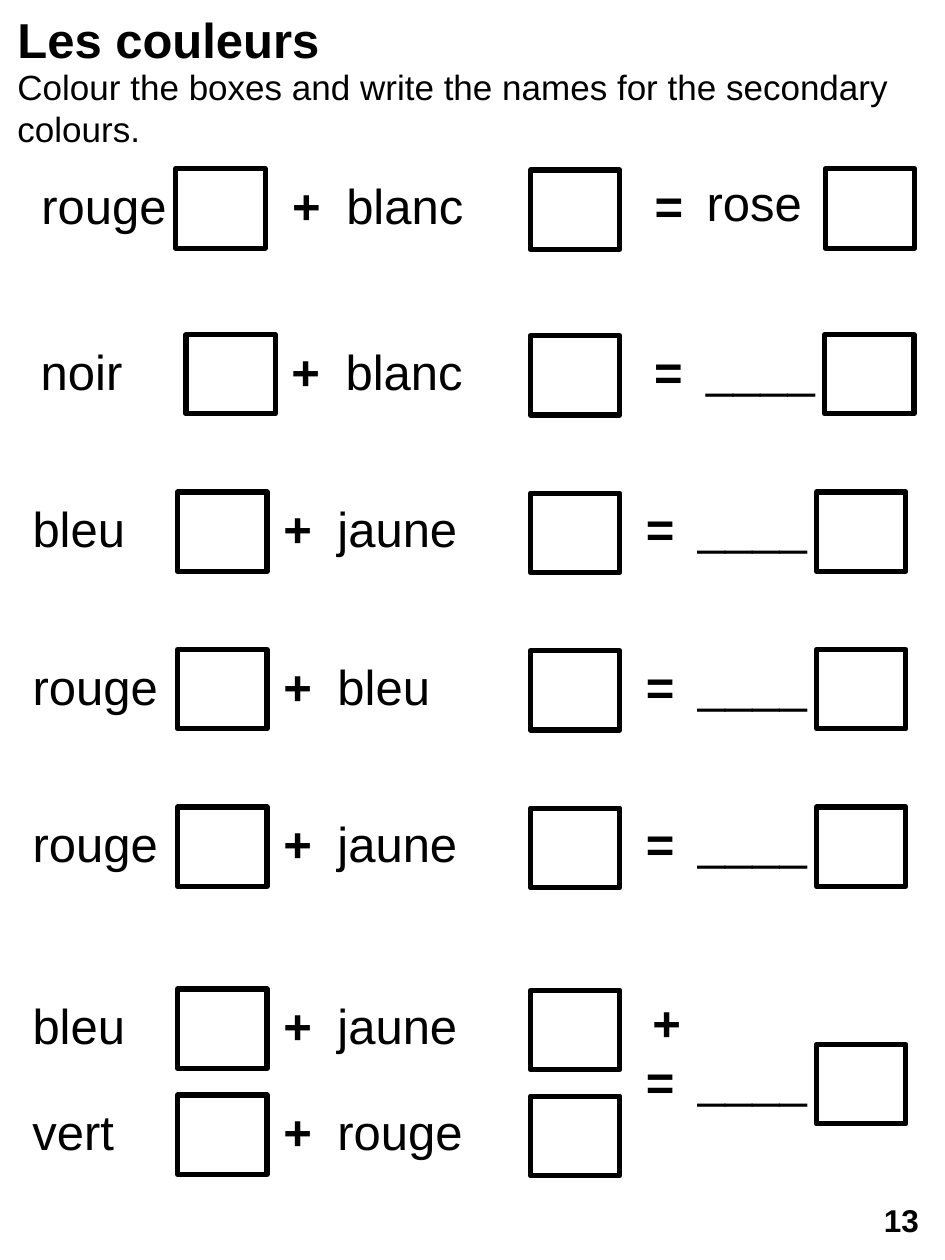
"""Build the French colour-mixing worksheet page."""
import pptx
import pptx.util
import pptx.dml.color
import pptx.enum.shapes
import pptx.enum.text

theme = {
    "font": "Arial",
    "ink": pptx.dml.color.RGBColor(0, 0, 0),
    "paper": pptx.dml.color.RGBColor(255, 255, 255),
    "big": 28,
    "note": 20,
    "page": 18,
    "line": 3,
}

deck = pptx.Presentation()
deck.slide_width = pptx.util.Inches(7.5)
deck.slide_height = pptx.util.Inches(10)
slide = deck.slides.add_slide(deck.slide_layouts[6])
col = deck.slide_width / 75
row = deck.slide_height / 100
kinds = pptx.enum.shapes.MSO_SHAPE


def place(x, y, wide, high):
    return int(x * col), int(y * row), int(wide * col), int(high * row)


def write(text, x, y, wide, high=5.7, size="big", bold=False, wrap=False, shape=None):
    box = shape or slide.shapes.add_textbox(*place(x, y, wide, high))
    frame = box.text_frame
    frame.word_wrap = wrap
    para = frame.paragraphs[0]
    run = para.add_run()
    run.text = text
    run.font.name = theme["font"]
    run.font.size = pptx.util.Pt(theme[size])
    run.font.bold = bold
    run.font.color.rgb = theme["ink"]
    if shape:
        frame.vertical_anchor = pptx.enum.text.MSO_ANCHOR.MIDDLE
        para.alignment = pptx.enum.text.PP_ALIGN.CENTER


def draw(x, y, fill=False):
    box = slide.shapes.add_shape(kinds.RECTANGLE, *place(x, y, 7.1, 6.3))
    box.shadow.inherit = False
    if fill:
        box.fill.solid()
        box.fill.fore_color.rgb = theme["paper"]
    else:
        box.fill.background()
    box.line.color.rgb = theme["ink"]
    box.line.width = pptx.util.Pt(theme["line"])


wide = {"rouge": 12.1, "blanc": 11.4, "noir": 8.6, "bleu": 9.5,
        "jaune": 11.7, "vert": 8.6, "rose": 9.7, "____": 10.8}

# first, second, left edge, first box, top
sums = [
    ("rouge", "blanc", 2.3, 13.95, 13.45),
    ("noir", "blanc", 2.25, 14.75, 26.6),
    ("bleu", "jaune", 1.6, 14.1, 39.1),
    ("rouge", "bleu", 1.6, 14.1, 51.6),
    ("rouge", "jaune", 1.6, 14.1, 64.1),
    ("bleu", "jaune", 1.6, 14.1, 78.55),
    ("vert", "rouge", 1.6, 14.1, 86.95),
]
for first, second, left, box, top in sums:
    draw(box, top - 0.05)
    draw(42.1, top + 0.05, fill=True)
    write(first, left, top, wide[first])
    write("+", left + 19.9, top, 4.3, bold=True)
    write(second, left + 24.2, top, wide[second])

ends = [(left, top) for _, _, left, _, top in sums[:5]] + [(1.6, 82.95)]
for step, (left, top) in enumerate(ends):
    word = "____" if step else "rose"
    write(" =", left + 47.6, top, 6.5, bold=True)
    draw(left + 63.2, top - 0.05)
    write(word, left + 52.8, top - 0.25, wide[word])

write("+", 50.8, 78.3, 4.3, bold=True)
write("Les couleurs", 0.4, 0.3, 74.2, bold=True, wrap=True)
write("Colour the boxes and write the names for the secondary colours.",
      0.4, 4.7, 74.2, 7.7, size="note", wrap=True)

spot = (68.8, 94.5, 5.5, 4.7)
badge = slide.shapes.add_shape(kinds.ROUNDED_RECTANGLE, *place(*spot))
badge.shadow.inherit = False
badge.fill.background()
badge.line.fill.background()
write("13", *spot, size="page", bold=True, shape=badge)

deck.save("out.pptx")
